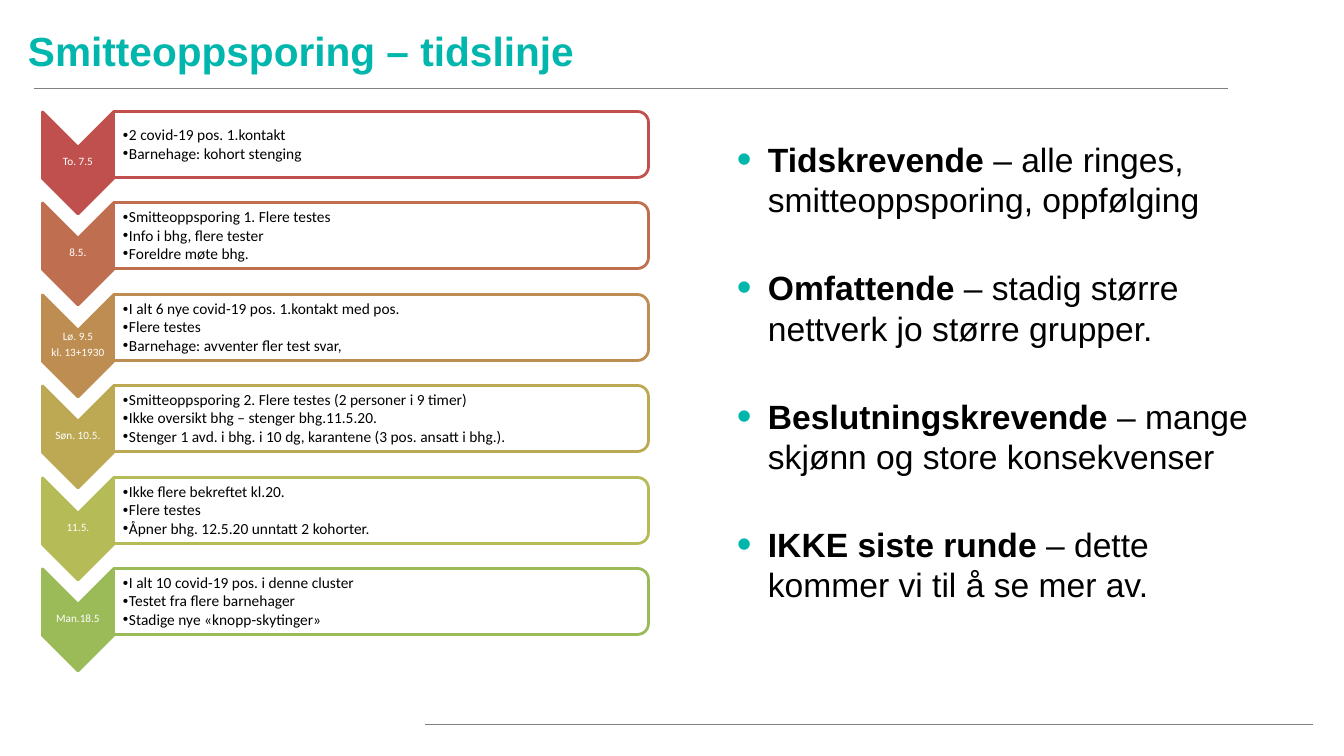
from lxml.etree import SubElement
from pptx import Presentation
from pptx.dml.color import RGBColor
from pptx.enum.shapes import MSO_CONNECTOR as Connector, MSO_SHAPE as Shape
from pptx.enum.text import MSO_ANCHOR as Anchor, PP_ALIGN as Align
from pptx.oxml.ns import qn
from pptx.util import Pt

EMU_PER_PX = 914400 / 100.8
COLORS = {
    "teal": "01B6AD", "gray": "808080", "black": "000000", "white": "FFFFFF",
    "red": "C0504D", "rust": "BF6F4F", "ochre": "BE8D52",
    "mustard": "BDA954", "lime": "B5BC57", "green": "9BBB59",
}

# Each step: colour, date lines, events
STEPS = [
    ("red", ["To. 7.5"],
     ["2 covid-19 pos. 1.kontakt", "Barnehage: kohort stenging"]),
    ("rust", ["8.5."],
     ["Smitteoppsporing 1. Flere testes", "Info i bhg, flere tester",
      "Foreldre møte bhg."]),
    ("ochre", ["Lø. 9.5", "kl. 13+1930"],
     ["I alt 6 nye covid-19 pos. 1.kontakt med pos.", "Flere testes",
      "Barnehage: avventer fler test svar,"]),
    ("mustard", ["Søn. 10.5."],
     ["Smitteoppsporing 2. Flere testes (2 personer i 9 timer)",
      "Ikke oversikt bhg – stenger bhg.11.5.20.",
      "Stenger 1 avd. i bhg. i 10 dg, karantene (3 pos. ansatt i bhg.)."]),
    ("lime", ["11.5."],
     ["Ikke flere bekreftet kl.20.", "Flere testes",
      "Åpner bhg. 12.5.20 unntatt 2 kohorter."]),
    ("green", ["Man.18.5"],
     ["I alt 10 covid-19 pos. i denne cluster", "Testet fra flere barnehager",
      "Stadige nye «knopp-skytinger»"]),
]
LESSONS = [
    ("Tidskrevende", " – alle ringes, smitteoppsporing, oppfølging"),
    ("Omfattende", " – stadig større nettverk jo større grupper."),
    ("Beslutningskrevende", " – mange skjønn og store konsekvenser"),
    ("IKKE siste runde", " – dette kommer vi til å se mer av."),
]


def px(value):
    return round(value * EMU_PER_PX)


def rgb(name):
    return RGBColor.from_string(COLORS[name])


def style_run(run, font_name, size, color, bold=False):
    font = run.font
    font.name, font.size, font.bold = font_name, Pt(size), bold
    font.color.rgb = rgb(color)


def add_bullet(paragraph, margin, hanging, color=None, percent=100):
    properties = paragraph._p.get_or_add_pPr()
    properties.set("marL", str(px(margin)))
    properties.set("indent", str(-px(hanging)))
    if color:
        bullet_color = SubElement(properties, qn("a:buClr"))
        SubElement(bullet_color, qn("a:srgbClr"), val=COLORS[color])
    SubElement(properties, qn("a:buSzPct"), val=str(percent * 1000))
    SubElement(properties, qn("a:buFont"), typeface="Arial")
    SubElement(properties, qn("a:buChar"), char="•")


def add_text_box(slide, left, top, width, height, margins, anchor=Anchor.MIDDLE):
    box = slide.shapes.add_textbox(px(left), px(top), px(width), px(height))
    frame = box.text_frame
    frame.word_wrap = True
    frame.vertical_anchor = anchor
    (frame.margin_left, frame.margin_top,
     frame.margin_right, frame.margin_bottom) = map(px, margins)
    return frame


def add_rule(slide, left, right, y, width):
    line = slide.shapes.add_connector(
        Connector.STRAIGHT, px(left), px(y), px(right), px(y))
    line.line.color.rgb = rgb("gray")
    line.line.width = Pt(width)
    SubElement(line._element.spPr, qn("a:effectLst"))


def add_turned_shape(slide, kind, center_x, center_y, width, height, fill, line):
    """Add a preset shape turned a quarter clockwise around its centre."""
    shape = slide.shapes.add_shape(
        kind, px(center_x - width / 2), px(center_y - height / 2),
        px(width), px(height))
    shape.rotation = 90
    shape.shadow.inherit = False
    shape.fill.solid()
    shape.fill.fore_color.rgb = rgb(fill)
    shape.line.color.rgb = rgb(line)
    shape.line.width = Pt(2)


def fill_lines(frame, lines, size, color, space_after, bulleted=False):
    frame.text = "\n".join(lines)
    for paragraph in frame.paragraphs:
        paragraph.line_spacing = 0.9
        paragraph.space_after = Pt(space_after)
        if bulleted:
            add_bullet(paragraph, 6, 6)
        else:
            paragraph.alignment = Align.CENTER
        style_run(paragraph.runs[0], "Calibri", size, color)


def add_step(slide, offset, color, date_lines, events):
    add_turned_shape(slide, Shape.CHEVRON, 78, 163 + offset, 102, 71, color, color)
    date = add_text_box(slide, 42, 147 + offset, 72, 30, (1, 1, 1, 1))
    fill_lines(date, date_lines, 8, "white", 2.3)
    add_turned_shape(slide, Shape.ROUND_2_SAME_RECTANGLE, 381, 144.5 + offset,
                     66, 535, "white", color)
    panel = add_text_box(slide, 114, 115 + offset, 531, 60, (9, 1, 1, 1))
    fill_lines(panel, events, 11, "black", 1.2, bulleted=True)


def add_title(slide, title):
    frame = add_text_box(slide, 18, 22, 1133, 57, (10, 5, 10, 5))
    frame.text = title
    style_run(frame.paragraphs[0].runs[0], "Arial", 29, "teal", bold=True)


def add_lessons(slide):
    frame = add_text_box(slide, 676, 134, 601, 537, (10, 5, 10, 5), Anchor.TOP)
    for index, (keyword, explanation) in enumerate(LESSONS):
        paragraph = frame.add_paragraph() if index else frame.paragraphs[0]
        if index:
            paragraph.space_before = Pt(34)
        add_bullet(paragraph, 82, 31, "teal", 125)
        for text, bold in ((keyword, True), (explanation, False)):
            run = paragraph.add_run()
            run.text = text
            style_run(run, "Arial", 24, "black", bold)


def main():
    presentation = Presentation()
    presentation.slide_width, presentation.slide_height = px(1344), px(756)
    slide = presentation.slides.add_slide(presentation.slide_layouts[6])

    # Heading and rules
    add_rule(slide, 34, 1228, 88, 0.5)
    add_rule(slide, 425, 1313, 725, 0.75)
    add_title(slide, "Smitteoppsporing – tidslinje")

    # Timeline, one step every 91.5 px
    for index, step in enumerate(STEPS):
        add_step(slide, index * 183 // 2, *step)

    # Lessons learned
    add_lessons(slide)
    presentation.save("out.pptx")


if __name__ == "__main__":
    main()
